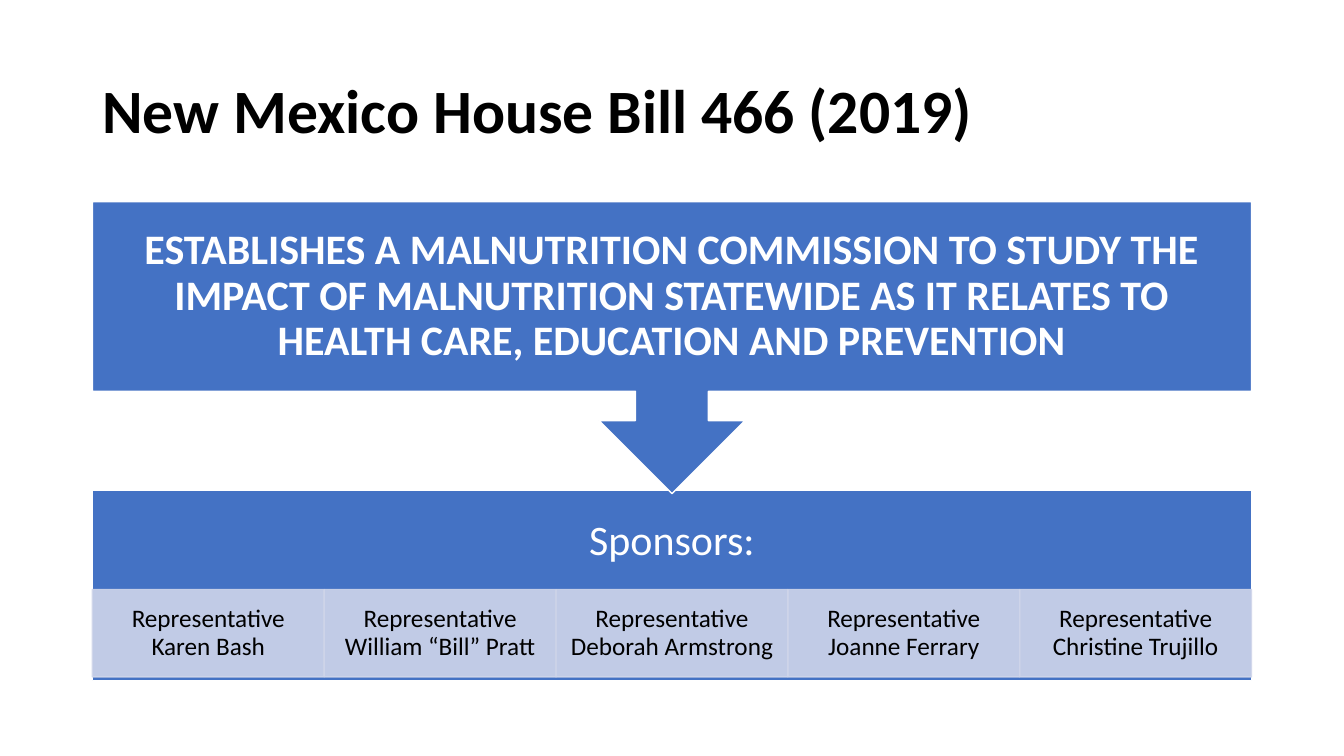
"""Build a slide on New Mexico House Bill 466 and its sponsors."""
from lxml import etree
from pptx import Presentation
from pptx.dml.color import RGBColor
from pptx.enum import shapes, text
from pptx.oxml import ns
from pptx.util import Pt

LEFT, WIDTH = 66, 828
BLUE, PALE, WHITE, BLACK = "4472C4", "CFD5EA", "FFFFFF", "000000"


def write(box, words, size, color, bold=False, align=text.PP_ALIGN.CENTER):
    frame = box.text_frame
    frame.text = words
    frame.word_wrap = True
    frame.vertical_anchor = text.MSO_ANCHOR.MIDDLE
    para = frame.paragraphs[0]
    para.alignment = align
    para.line_spacing = 0.9
    span = para.runs[0]
    span.font.name = "Calibri"
    span.font.size = Pt(size)
    span.font.bold = bold
    span.font.color.rgb = RGBColor.from_string(color)


def add_block(kind, left, top, width, height, fill, line, insets):
    block = page.shapes.add_shape(kind, Pt(left), Pt(top), Pt(width), Pt(height))
    block.shadow.inherit = False
    block.fill.solid()
    block.fill.fore_color.rgb = RGBColor.from_string(fill)
    block.line.color.rgb = RGBColor.from_string(line)
    block.line.width = Pt(1)
    frame = block.text_frame
    frame.margin_left = frame.margin_right = Pt(insets[0])
    frame.margin_top, frame.margin_bottom = Pt(insets[1]), Pt(insets[2])
    return block


deck = Presentation()
deck.slide_width, deck.slide_height = Pt(960), Pt(540)
page = deck.slides.add_slide(deck.slide_layouts[5])

title = page.shapes.title
title.left, title.top, title.width, title.height = Pt(LEFT), Pt(28.75), Pt(WIDTH), Pt(104.4)
write(title, "New Mexico House Bill 466 (2019)", 44, BLACK, True, text.PP_ALIGN.LEFT)

sponsors = add_block(shapes.MSO_SHAPE.RECTANGLE, LEFT, 350.6, WIDTH, 135.6,
                     BLUE, WHITE, (16.5, 16.5, 78.5))
write(sponsors, "Sponsors:", 30, WHITE)

names = ["Karen Bash", "William “Bill” Pratt", "Deborah Armstrong",
         "Joanne Ferrary", "Christine Trujillo"]
cell_width = WIDTH / len(names)
for column, name in enumerate(names):
    cell = add_block(shapes.MSO_SHAPE.RECTANGLE, LEFT + column * cell_width, 421.1,
                     cell_width, 62.4, PALE, PALE, (10, 2, 2))
    for color in cell._element.spPr.iter(ns.qn("a:srgbClr")):
        etree.SubElement(color, ns.qn("a:alpha"), val="90000")
    write(cell, f"Representative {name}", 18, BLACK)

purpose = add_block(shapes.MSO_SHAPE.DOWN_ARROW_CALLOUT, LEFT, 144, WIDTH, 208.6,
                    BLUE, WHITE, (16.5, 16.5, 16.5))
write(purpose, "ESTABLISHES A MALNUTRITION COMMISSION TO STUDY THE IMPACT OF MALNUTRITION "
      "STATEWIDE AS IT RELATES TO HEALTH CARE, EDUCATION AND PREVENTION", 30, WHITE, True)

deck.save("out.pptx")
